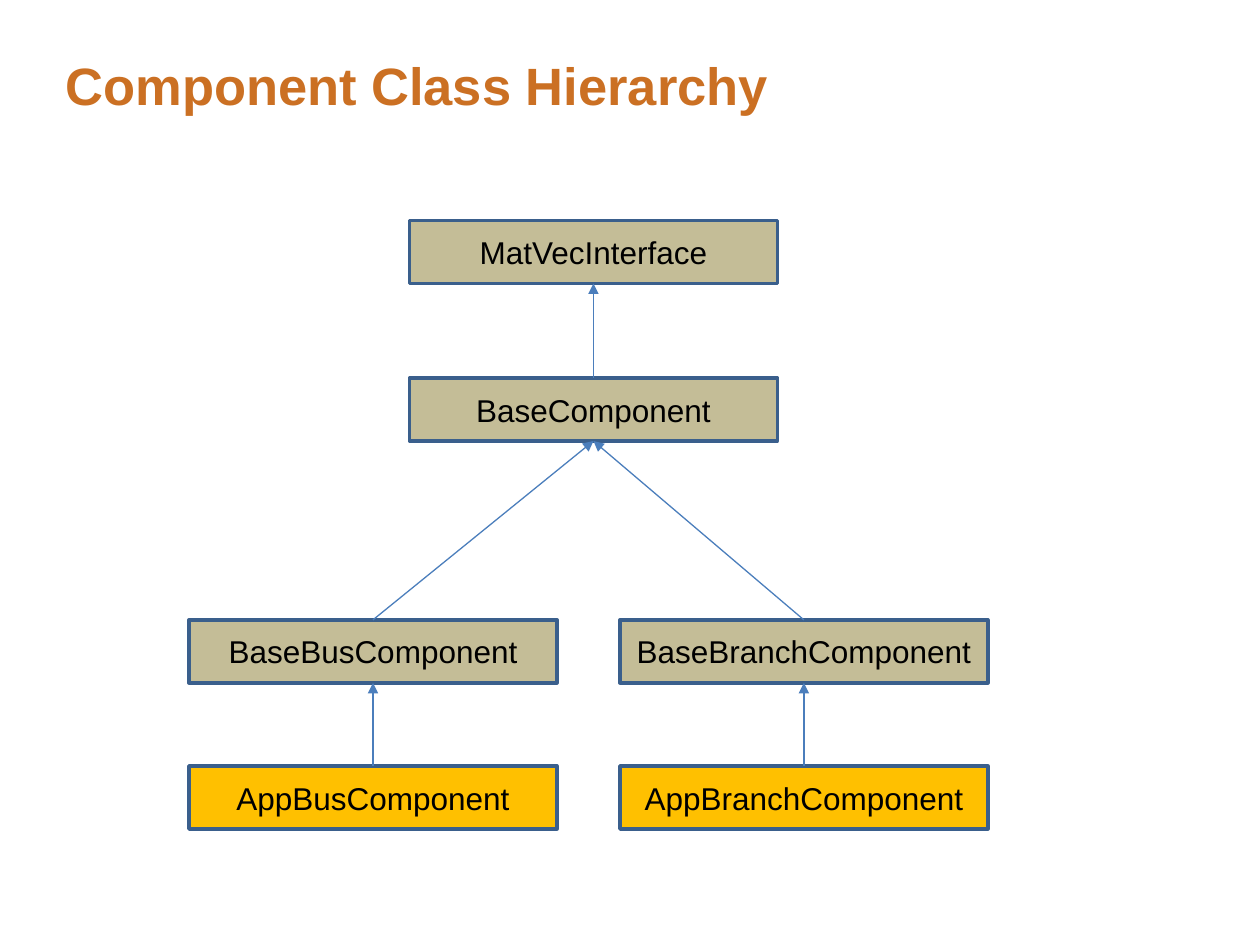
from pptx import Presentation
from pptx.dml.color import RGBColor
from pptx.enum.shapes import MSO_CONNECTOR as Link, MSO_SHAPE as Shape
from pptx.enum.text import MSO_ANCHOR as Anchor, PP_ALIGN as Align
from pptx.oxml.ns import qn
from pptx.util import Inches, Pt
from lxml.etree import SubElement

ORANGE = RGBColor(0xCB, 0x70, 0x23)
TAN = RGBColor(0xC4, 0xBD, 0x97)
GOLD = RGBColor(0xFF, 0xC0, 0x00)
NAVY = RGBColor(0x3A, 0x5F, 0x8C)
BLUE = RGBColor(0x4B, 0x7E, 0xBC)
BLACK = RGBColor(0, 0, 0)

TITLE = {"name": "Arial", "size": Pt(30), "bold": True}
LABEL = {"name": "Arial", "size": Pt(18), "bold": False}
FLUSH = {"margin_left": 0, "margin_top": 0, "margin_right": 0,
         "margin_bottom": 0, "vertical_anchor": Anchor.TOP,
         "word_wrap": True}

WIDE, HIGH = 2.92, 0.5
TOP, BOTTOM = 0, 2  # connection sites of a rectangle

# Name, left, top, fill and parent of each class, in inches from the tree box
NODES = [
    ("MatVecInterface", 1.75, 0, TAN, None),
    ("BaseComponent", 1.75, 1.25, TAN, "MatVecInterface"),
    ("BaseBusComponent", 0, 3.17, TAN, "BaseComponent"),
    ("BaseBranchComponent", 3.42, 3.17, TAN, "BaseComponent"),
    ("AppBusComponent", 0, 4.33, GOLD, "BaseBusComponent"),
    ("AppBranchComponent", 3.42, 4.33, GOLD, "BaseBranchComponent"),
]


def style(item, values):
    for key, value in values.items():
        setattr(item, key, value)


def add_title(slide, left, top, width, height):
    title = slide.shapes.title
    style(title, {"left": Inches(left), "top": Inches(top),
                  "width": Inches(width), "height": Inches(height)})
    title.text_frame.text = "Component Class Hierarchy"
    style(title.text_frame, FLUSH)
    para = title.text_frame.paragraphs[0]
    style(para, {"alignment": Align.LEFT, "line_spacing": 0.85})
    font = para.runs[0].font
    style(font, TITLE)
    font.color.rgb = ORANGE


def add_node(slide, name, left, top, fill):
    node = slide.shapes.add_shape(Shape.RECTANGLE, Inches(left), Inches(top),
                                  Inches(WIDE), Inches(HIGH))
    node.shadow.inherit = False
    node.fill.solid()
    node.fill.fore_color.rgb = fill
    node.line.color.rgb = NAVY
    node.line.width = Pt(2)
    frame = node.text_frame
    frame.text = name
    style(frame, {"vertical_anchor": Anchor.MIDDLE, "word_wrap": True})
    para = frame.paragraphs[0]
    para.alignment = Align.CENTER
    font = para.runs[0].font
    style(font, LABEL)
    font.color.rgb = BLACK
    return node


def add_arrow(slide, child, parent):
    arrow = slide.shapes.add_connector(Link.STRAIGHT, 0, 0, 0, 0)
    arrow.begin_connect(child, TOP)
    arrow.end_connect(parent, BOTTOM)
    arrow.line.color.rgb = BLUE
    arrow.line.width = Pt(0.75)
    # Arrowhead at the parent, and no shadow
    SubElement(arrow.line._get_or_add_ln(), qn("a:tailEnd"), type="triangle")
    SubElement(arrow._element.spPr, qn("a:effectLst"))


def add_tree(slide, left, top):
    made = {}
    for name, x, y, fill, parent in NODES:
        made[name] = add_node(slide, name, left + x, top + y, fill)
        if parent:
            add_arrow(slide, made[name], made[parent])


def main():
    deck = Presentation()
    deck.slide_width, deck.slide_height = Inches(10), Inches(7.5)
    slide = deck.slides.add_slide(deck.slide_layouts.get_by_name("Title Only"))
    add_title(slide, 0.52, 0.5, 8.97, 1.08)
    add_tree(slide, 1.5, 1.75)
    deck.save("out.pptx")


if __name__ == "__main__":
    main()
